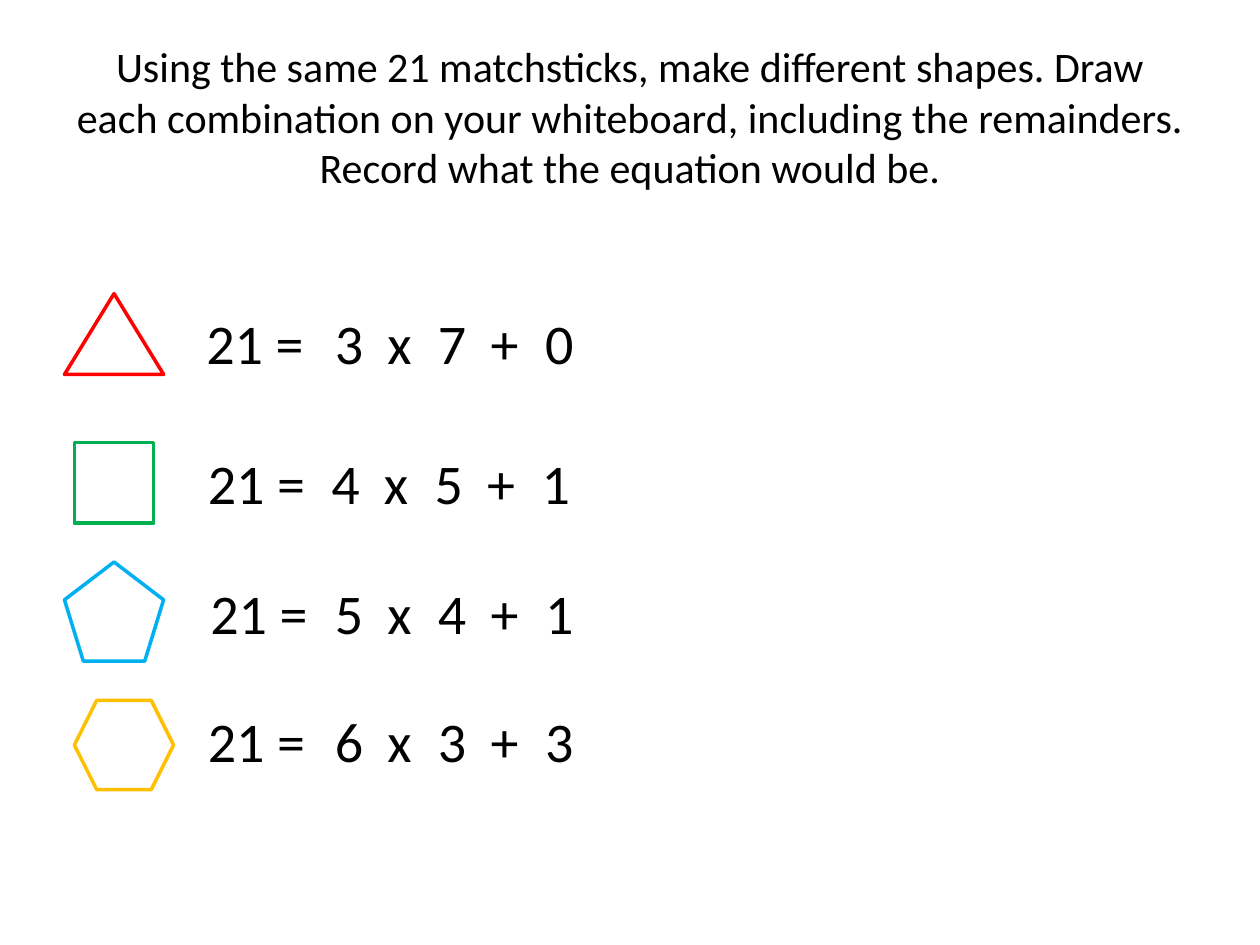
"""Build a slide on making shapes from 21 matchsticks."""
from pptx import Presentation
from pptx.dml.color import RGBColor
from pptx.enum.shapes import MSO_SHAPE
from pptx.enum.text import MSO_ANCHOR, MSO_AUTO_SIZE, PP_ALIGN
from pptx.oxml.ns import qn
from pptx.util import Cm, Pt
from lxml.etree import SubElement

COLOURS = {"text": "000000", "paper": "FFFFFF", "triangle": "FF0000",
           "square": "00B050", "pentagon": "00B0F0", "hexagon": "FFC000"}
TERM_STOPS = (1.06, 2.08, 3.14, 4.24)
EQUALS_STOP = 2.49
BOX_HEIGHT = 1.63


def colour(name):
    return RGBColor.from_string(COLOURS[name])


class MatchstickSlide:
    """Holds the text style and the current page."""

    def __init__(self, deck):
        self.page = deck.slides.add_slide(deck.slide_layouts[5])
        self.style = {"name": "Calibri", "bold": False}

    def add_text(self, paragraph, text, size):
        span = paragraph.add_run()
        span.text = text
        for key, value in {**self.style, "size": Pt(size)}.items():
            setattr(span.font, key, value)
        span.font.color.rgb = colour("text")

    def title(self, text, left, top, width, height):
        box = self.page.shapes.title
        place = {"left": left, "top": top, "width": width, "height": height}
        for key, value in place.items():
            setattr(box, key, Cm(value))
        box.text_frame.vertical_anchor = MSO_ANCHOR.MIDDLE
        paragraph = box.text_frame.paragraphs[0]
        paragraph.alignment = PP_ALIGN.CENTER
        self.add_text(paragraph, text, 24)

    def equation(self, text, left, top, width, stops=()):
        box = self.page.shapes.add_textbox(Cm(left), Cm(top), Cm(width), Cm(BOX_HEIGHT))
        frame = box.text_frame
        frame.word_wrap = True
        frame.auto_size = MSO_AUTO_SIZE.SHAPE_TO_FIT_TEXT
        paragraph = frame.paragraphs[0]
        if stops:
            tabs = SubElement(paragraph._p.get_or_add_pPr(), qn("a:tabLst"))
            for stop in stops:
                SubElement(tabs, qn("a:tab"), pos=str(Cm(stop)), algn="l")
        self.add_text(paragraph, text, 32)

    def outline(self, kind, name, left, top, width, height):
        shape = self.page.shapes.add_shape(kind, Cm(left), Cm(top), Cm(width), Cm(height))
        shape.shadow.inherit = False
        shape.fill.solid()
        shape.fill.fore_color.rgb = colour("paper")
        shape.line.color.rgb = colour(name)
        shape.line.width = Pt(2)


def main():
    deck = Presentation()
    deck.slide_width, deck.slide_height = Cm(25.4), Cm(19.05)
    slide = MatchstickSlide(deck)
    slide.title("Using the same 21 matchsticks, make different shapes. Draw each "
                "combination on your whiteboard, including the remainders. "
                "Record what the equation would be.", 1.27, 0.76, 22.86, 3.18)

    for kind, name, *place in (
            (MSO_SHAPE.ISOSCELES_TRIANGLE, "triangle", 1.3, 5.92, 2, 1.63),
            (MSO_SHAPE.RECTANGLE, "square", 1.5, 8.92, 1.6, 1.63),
            (MSO_SHAPE.REGULAR_PENTAGON, "pentagon", 1.3, 11.33, 2, 2),
            (MSO_SHAPE.HEXAGON, "hexagon", 1.5, 14.12, 2, 1.8)):
        slide.outline(kind, name, *place)

    for terms, left, top in (("3\tx\t7\t+\t0", 3.91, 6.1),
                             ("5\tx\t4\t+\t1", 3.99, 11.53),
                             ("6\tx\t3\t+\t3", 3.94, 14.12)):
        slide.equation("21 =", left, top, 3.4)
        slide.equation(terms, 6.5, top, 9.2, TERM_STOPS)
    stops = [EQUALS_STOP + stop for stop in (0, *TERM_STOPS)]
    slide.equation("21 =\t4\tx\t5\t+\t1", 3.94, 8.92, 12.55, stops)
    deck.save("out.pptx")


if __name__ == "__main__":
    main()
